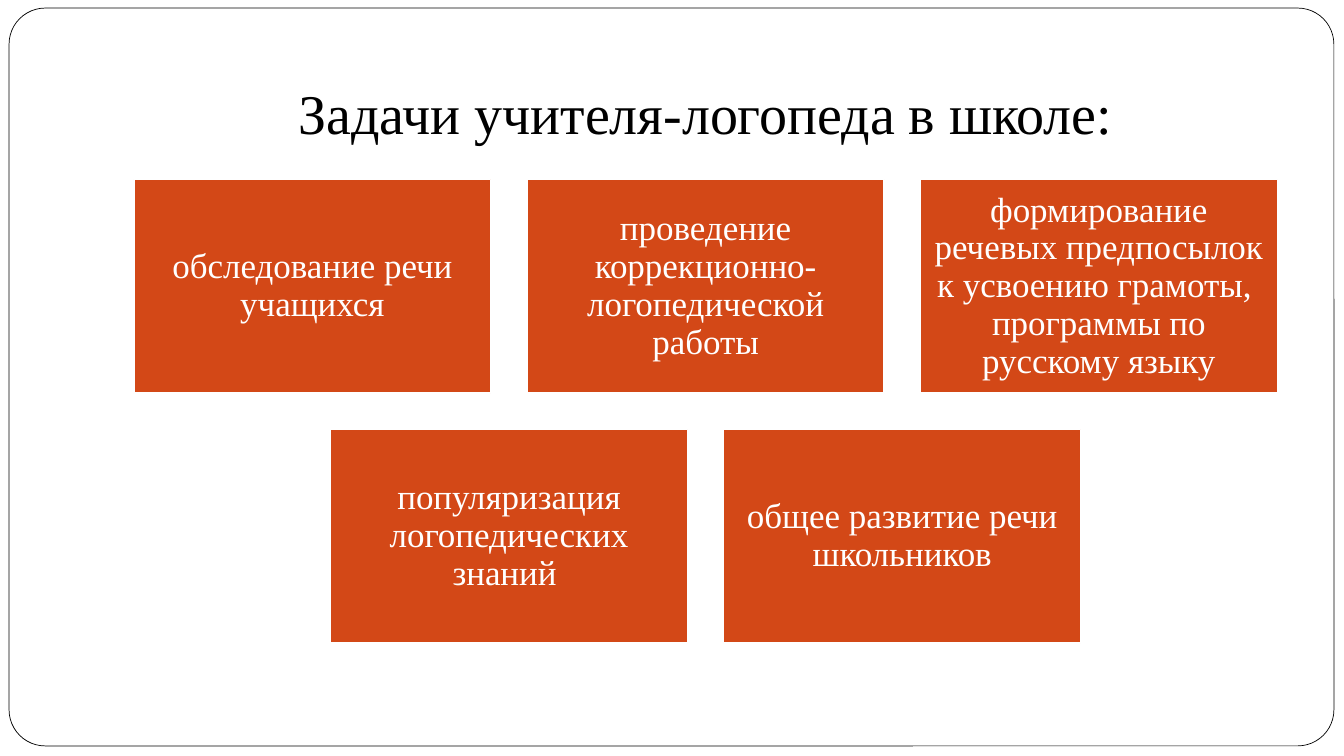
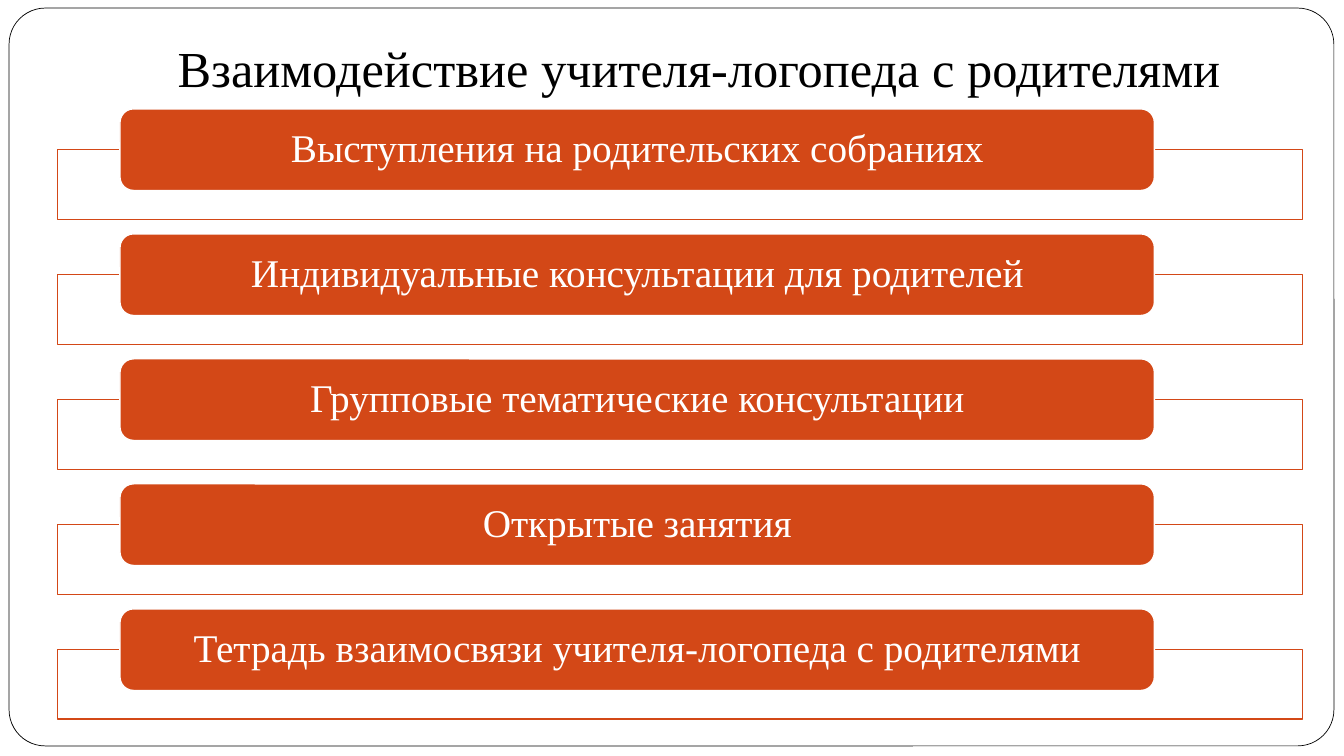
from pptx import Presentation
from pptx.dml.color import RGBColor
from pptx.enum.shapes import MSO_SHAPE
from pptx.enum.text import MSO_ANCHOR, PP_ALIGN
from pptx.util import Inches, Pt

COLORS = {"paper": "FFFFFF", "ink": "000000", "accent": "D34817"}
FONT = "Times New Roman"
WIDTH, HEIGHT = 13.33, 7.5

deck = Presentation()
deck.slide_width, deck.slide_height = Inches(WIDTH), Inches(HEIGHT)


def add_box(page, kind, place, fill, line, line_width=1, text="", size=25, margins=(0.1, 0.1)):
    """Add a filled, outlined shape, with centred light text if any is given."""
    box = page.shapes.add_shape(kind, *[Inches(length) for length in place])
    box.shadow.inherit = False
    box.fill.solid()
    box.fill.fore_color.rgb = RGBColor.from_string(COLORS[fill])
    box.line.color.rgb = RGBColor.from_string(COLORS[line])
    box.line.width = Pt(line_width)
    if text:
        write(box, text, size, "paper", MSO_ANCHOR.MIDDLE, margins, margins[1], 0.9)
    return box


def write(box, text, size, color, anchor, margins, bottom, spacing=1.0):
    """Set one centred paragraph; margins are the sides and the top."""
    frame = box.text_frame
    frame.word_wrap = True
    frame.vertical_anchor = anchor
    frame.margin_left = frame.margin_right = Inches(margins[0])
    frame.margin_top, frame.margin_bottom = Inches(margins[1]), Inches(bottom)
    para = frame.paragraphs[0]
    para.text = text
    para.alignment = PP_ALIGN.CENTER
    para.line_spacing = spacing
    para.font.name, para.font.size = FONT, Pt(size)
    para.font.color.rgb = RGBColor.from_string(COLORS[color])


# Both pages: rounded frame and title
titles = [
    ("Задачи учителя-логопеда в школе:", 40, 1.25),
    ("Взаимодействие учителя-логопеда с родителями ", 36, 0.77),
]
pages = []
for title, size, title_height in titles:
    page = deck.slides.add_slide(deck.slide_layouts[6])
    frame_place = (0.09, 0.08, 13.14, 7.32)
    frame = add_box(page, MSO_SHAPE.ROUNDED_RECTANGLE, frame_place, "paper", "ink", 0.5)
    frame.adjustments[0] = 0.049
    heading = page.shapes.add_textbox(
        Inches(WIDTH * 0.1), Inches(HEIGHT * 0.04), Inches(WIDTH * 0.85), Inches(title_height)
    )
    write(heading, title, size, "ink", MSO_ANCHOR.BOTTOM, (0.1, 0.05), 0.1)
    pages.append(page)
tasks_page, parents_page = pages

# Tasks: rows of cards, each row centred under the title
task_rows = [
    [
        "обследование речи учащихся",
        "проведение коррекционно-логопедической работы",
        "формирование речевых предпосылок к усвоению грамоты, \nпрограммы по русскому языку",
    ],
    ["популяризация логопедических знаний ", "общее развитие речи школьников"],
]
card_width, card_height, gap = 3.54, 2.12, 0.36
row_center, first_top = WIDTH * 0.525, 1.78
for row, tasks in enumerate(task_rows):
    row_width = len(tasks) * (card_width + gap) - gap
    top = first_top + row * (card_height + gap)
    for column, task in enumerate(tasks):
        left = row_center - row_width / 2 + column * (card_width + gap)
        place = (left, top, card_width, card_height)
        add_box(tasks_page, MSO_SHAPE.RECTANGLE, place, "accent", "paper", text=task)

# Work with parents: a label over an outlined strip in each row
activities = [
    "Выступления на родительских собраниях",
    "Индивидуальные консультации для родителей",
    "Групповые тематические консультации",
    "Открытые занятия",
    "Тетрадь взаимосвязи учителя-логопеда с родителями",
]
row_step, label_height = 1.24, 0.81
for row, activity in enumerate(activities):
    top = 1.08 + row * row_step
    strip = (0.57, top + label_height / 2, 12.35, 0.69)
    label = (1.19, top, 10.26, label_height)
    add_box(parents_page, MSO_SHAPE.RECTANGLE, strip, "paper", "accent")
    add_box(parents_page, MSO_SHAPE.ROUNDED_RECTANGLE, label, "accent", "paper",
            text=activity, size=28, margins=(0.33, 0))

deck.save("out.pptx")
